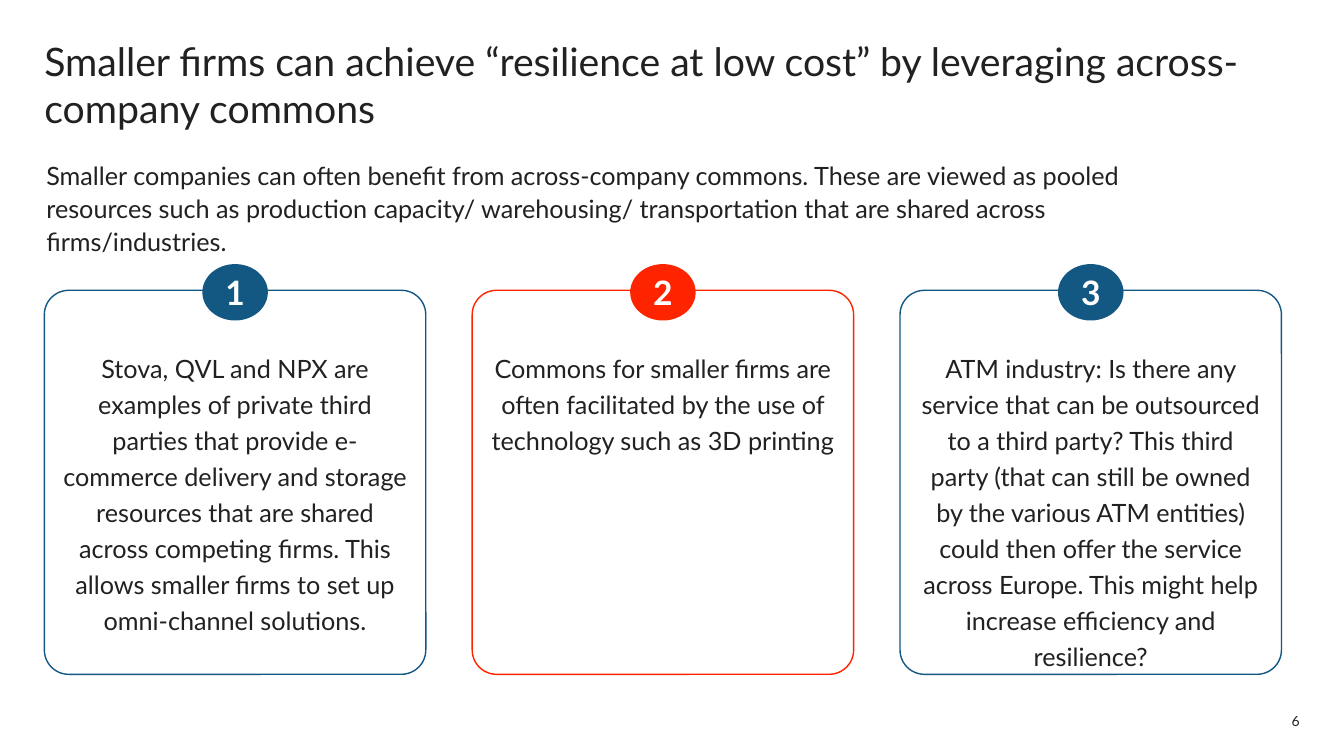
"""Builds a slide on across-company commons with three numbered cards."""
from pptx import Presentation
from pptx.dml.color import RGBColor
from pptx.enum.shapes import MSO_SHAPE
from pptx.enum.text import MSO_ANCHOR, PP_ALIGN
from pptx.util import Inches, Pt

ROUND_RECT, OVAL = MSO_SHAPE.ROUNDED_RECTANGLE, MSO_SHAPE.OVAL
TOP, MIDDLE = MSO_ANCHOR.TOP, MSO_ANCHOR.MIDDLE
LEFT, CENTER, RIGHT = PP_ALIGN.LEFT, PP_ALIGN.CENTER, PP_ALIGN.RIGHT
COLORS = {"text": "212121", "white": "FFFFFF", "blue": "135783", "red": "FF2400"}
FONT = "Lato"
CARDS = [
    ("blue", "Stova, QVL and NPX are examples of private third parties that provide "
     "e-commerce delivery and storage resources that are shared across competing firms. "
     "This allows smaller firms to set up omni-channel solutions."),
    ("red", "Commons for smaller firms are often facilitated by the use of technology "
     "such as 3D printing"),
    ("blue", "ATM industry: Is there any service that can be outsourced to a third party? "
     "This third party (that can still be owned by the various ATM entities) could then "
     "offer the service across Europe. This might help increase efficiency and resilience?"),
]


def rgb(name):
    return RGBColor.from_string(COLORS[name])


def write(sp, text, size, color="text", bold=False, align=LEFT, anchor=TOP,
          insets=(0, 0, 0, 0), spacing=None, after=None, wrap=True):
    tf = sp.text_frame
    tf.word_wrap = wrap
    tf.vertical_anchor = anchor
    tf.margin_left, tf.margin_top, tf.margin_right, tf.margin_bottom = map(Inches, insets)
    p = tf.paragraphs[0]
    p.text = text
    p.alignment = align
    if spacing:
        p.line_spacing = spacing
    if after:
        p.space_after = Pt(after)
    font = p.runs[0].font
    font.name, font.size, font.bold = FONT, Pt(size), bold
    font.color.rgb = rgb(color)


def add_text(s, box, text, size, **style):
    write(s.shapes.add_textbox(*map(Inches, box)), text, size, **style)


def add_panel(s, kind, box, fill, line=None):
    sp = s.shapes.add_shape(kind, *map(Inches, box))
    sp.shadow.inherit = False
    sp.fill.solid()
    sp.fill.fore_color.rgb = rgb(fill)
    if line:
        sp.line.color.rgb = rgb(line)
        sp.line.width = Pt(1)
    else:
        sp.line.fill.background()
    return sp


def add_card(s, box, number, color, text):
    x, y, w, h = box
    card = add_panel(s, ROUND_RECT, box, "white", color)
    card.adjustments[0] = 0.064
    write(card, text, 18, align=CENTER, insets=(0.1, 0.5, 0.1, 0.2), spacing=1.19, after=18)
    badge_w, badge_h = 0.65, 0.56
    badge = add_panel(s, OVAL, (x + (w - badge_w) / 2, y - 0.26, badge_w, badge_h), color)
    write(badge, str(number), 24, "white", bold=True, align=CENTER, anchor=MIDDLE)


def add_cards(s, box, gap):
    x, y, w, h = box
    card_w = (w - gap * (len(CARDS) - 1)) / len(CARDS)
    for i, (color, text) in enumerate(CARDS):
        add_card(s, (x + i * (card_w + gap), y, card_w, h), i + 1, color, text)


def add_header(s, box):
    x, y, w, h = box
    add_text(s, (x, y, w, 0.94),
             "Smaller firms can achieve “resilience at low cost” by leveraging "
             "across-company commons", 28)
    add_text(s, (x + 0.02, y + 1.2, 11.68, h - 1.2),
             "Smaller companies can often benefit from across-company commons. These are "
             "viewed as pooled resources such as production capacity/ warehousing/ "
             "transportation that are shared across firms/industries.",
             18, anchor=MIDDLE, spacing=1.1)


def main():
    prs = Presentation()
    prs.slide_width, prs.slide_height = Inches(13.33), Inches(7.5)
    s = prs.slides.add_slide(prs.slide_layouts[6])
    add_header(s, (0.44, 0.37, 12.45, 2.17))
    add_text(s, (12.72, 7.07, 0.17, 0.17), "6", 10, align=RIGHT, anchor=MIDDLE, wrap=False)
    add_cards(s, (0.44, 2.88, 12.27, 3.81), 0.46)
    prs.save("out.pptx")


if __name__ == "__main__":
    main()
